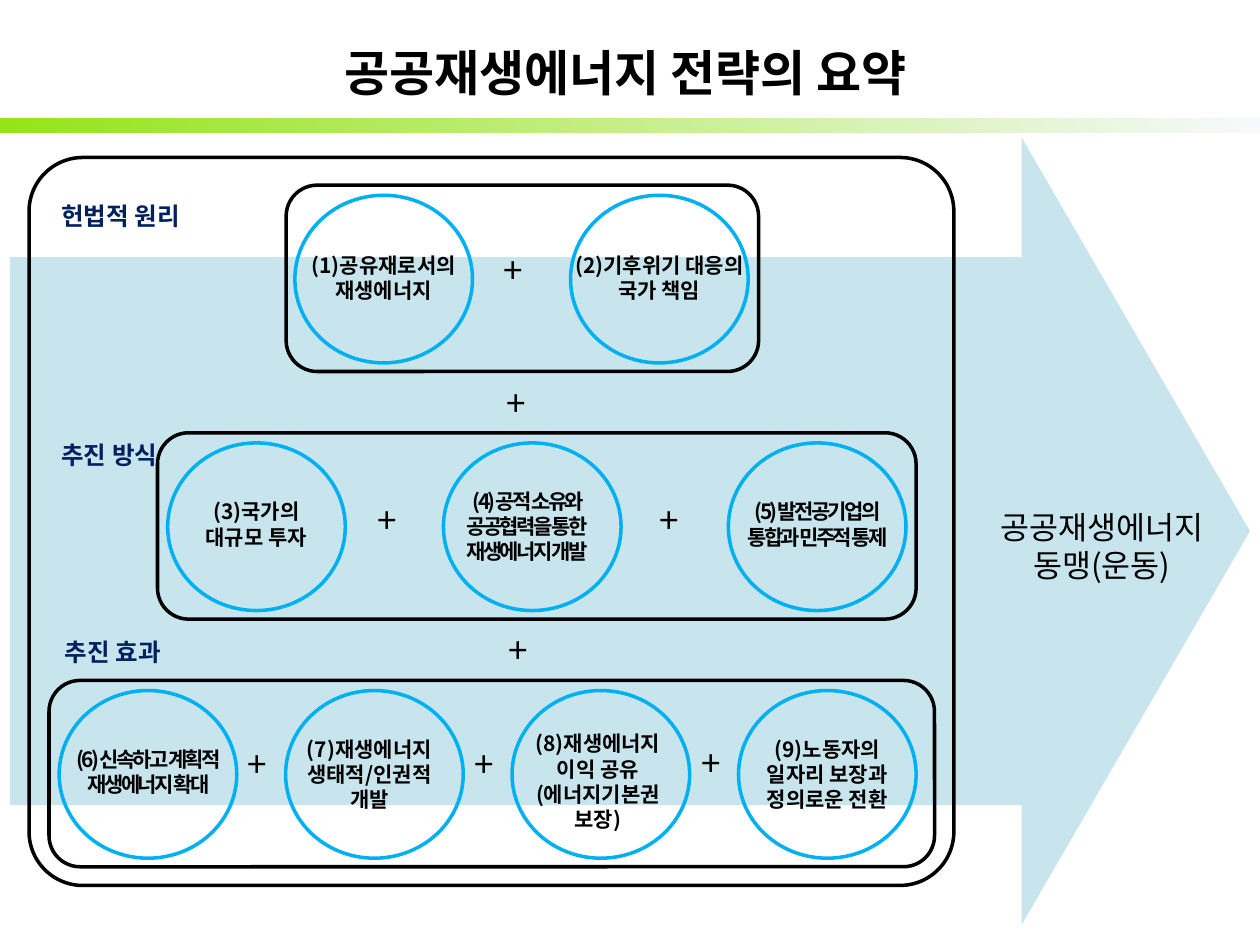
from lxml import etree
from pptx import Presentation
from pptx.dml.color import RGBColor
from pptx.enum.shapes import MSO_SHAPE as Shape
from pptx.enum.text import MSO_ANCHOR as Anchor, PP_ALIGN as Align
from pptx.oxml.ns import qn
from pptx.util import Pt

FONT = "Noto Sans CJK KR"
BLACK, NAVY, SKY = "000000", "002060", "00B0F0"


def add_outline(kind, left, top, width, height, color=None):
    """Add an unfilled shape; without a colour it has no line either."""
    shape = slide.shapes.add_shape(kind, Pt(left), Pt(top), Pt(width), Pt(height))
    shape.shadow.inherit = False
    shape.fill.background()
    if color:
        shape.line.color.rgb = RGBColor.from_string(color)
        shape.line.width = Pt(2)
    else:
        shape.line.fill.background()
    return shape


def add_text(text, left, top, width, height, size, color=BLACK, bold=False,
             align=Align.CENTER, spacing=0):
    """Add a text box; spacing is the letter spacing in points."""
    box = slide.shapes.add_textbox(Pt(left), Pt(top), Pt(width), Pt(height))
    frame = box.text_frame
    frame.word_wrap = True
    frame.text = text
    for paragraph in frame.paragraphs:
        paragraph.alignment = align
        for run in paragraph.runs:
            run.font.size = Pt(size)
            run.font.bold = bold
            run.font.name = FONT
            run.font.color.rgb = RGBColor.from_string(color)
            properties = run.font._element
            etree.SubElement(properties, qn("a:ea")).set("typeface", FONT)
            if spacing:
                properties.set("spc", str(int(spacing * 100)))
    return box


presentation = Presentation()
presentation.slide_width, presentation.slide_height = Pt(720), Pt(540)
slide = presentation.slides.add_slide(presentation.slide_layouts[6])

# Title with the green band below
band = add_outline(Shape.RECTANGLE, 0, 67.5, 720, 8.5)
band.fill.gradient()
band.fill.gradient_angle = 0
for stop, color in zip(band.fill.gradient_stops, ("94E417", "F6F9FC")):
    stop.color.rgb = RGBColor.from_string(color)

# Background arrow, 76 % opaque
arrow = add_outline(Shape.RIGHT_ARROW, 5.8, 78.5, 708.5, 450)
arrow.adjustments[0], arrow.adjustments[1] = 0.696, 0.29
arrow.fill.solid()
arrow.fill.fore_color.rgb = RGBColor.from_string("B7DEE8")
fill_color = arrow._element.spPr.find(qn("a:solidFill"))[0]
etree.SubElement(fill_color, qn("a:alpha")).set("val", "76000")

title = add_text("공공재생에너지 전략의 요약", 20, 21.6, 675, 39, 28, bold=True)
title.text_frame.vertical_anchor = Anchor.MIDDLE

# Each row: frame left and width, then its circles as
# (circle left, text, text left, text width, text offset, letter spacing)
rows = [
    (163.5, 270, [
        (168.5, "(1)공유재로서의 재생에너지", 168.5, 101.5, 29, 0),
        (326, "(2)기후위기 대응의 국가 책임", 320.5, 112.5, 29, 0)]),
    (90, 433.5, [
        (95.8, "(3)국가의\n대규모 투자", 104.4, 84.2, 28.5, 0),
        (253.4, "(4)공적 소유와 공공협력을 통한\n재생에너지 개발", 253.4, 95.8, 22.5, -1.5),
        (416.2, "(5)발전공기업의\n통합과 민주적 통제", 408.2, 118, 28.5, -1.5)]),
    (28, 506, [
        (33.8, "(6)신속하고 계획적\n재생에너지 확대", 28.8, 112.3, 28.5, -1.5),
        (163.2, "(7)재생에너지\n생태적/인권적 개발", 163.2, 95.8, 22.5, 0),
        (292.6, "(8)재생에너지 이익 공유\v(에너지기본권 보장)", 293.8, 95.8, 19.5, 0),
        (422, "(9)노동자의\n일자리 보장과\n정의로운 전환", 422, 101.5, 22.5, 0)]),
]
FIRST_TOP, ROW_STEP = 105.8, 141.5
for index, (frame_left, frame_width, circles) in enumerate(rows):
    frame_top = FIRST_TOP + index * ROW_STEP
    circle_top = frame_top + 5.8
    add_outline(Shape.ROUNDED_RECTANGLE, frame_left, frame_top, frame_width, 106.5, BLACK)
    for left, text, text_left, text_width, offset, spacing in circles:
        add_outline(Shape.OVAL, left, circle_top, 101.5, 95.8, SKY)
        add_text(text, text_left, circle_top + offset, text_width, 36, 12,
                 bold=True, spacing=spacing)

plus_signs = [(280.8, 138.2), (208.8, 281.5), (370, 281.5),
              (134.6, 420.5), (264.2, 420.5), (393.8, 420),
              (282.2, 214.6), (283.7, 355.7)]
for left, top in plus_signs:
    add_text("+", left, top, 28, 31.7, 20, align=Align.LEFT)

headings = [("헌법적 원리", 28, 111.6), ("추진 방식", 28, 247.7), ("추진 효과", 30, 360.7)]
for text, left, top in headings:
    add_text(text, left, top, 90, 24.5, 14, NAVY, True, Align.LEFT)

strategy_frame = add_outline(Shape.ROUNDED_RECTANGLE, 16.6, 90, 528.5, 416, BLACK)
strategy_frame.adjustments[0] = 0.074
add_text("공공재생에너지\n동맹(운동)", 556.6, 286.6, 146, 51, 18)

presentation.save("out.pptx")
